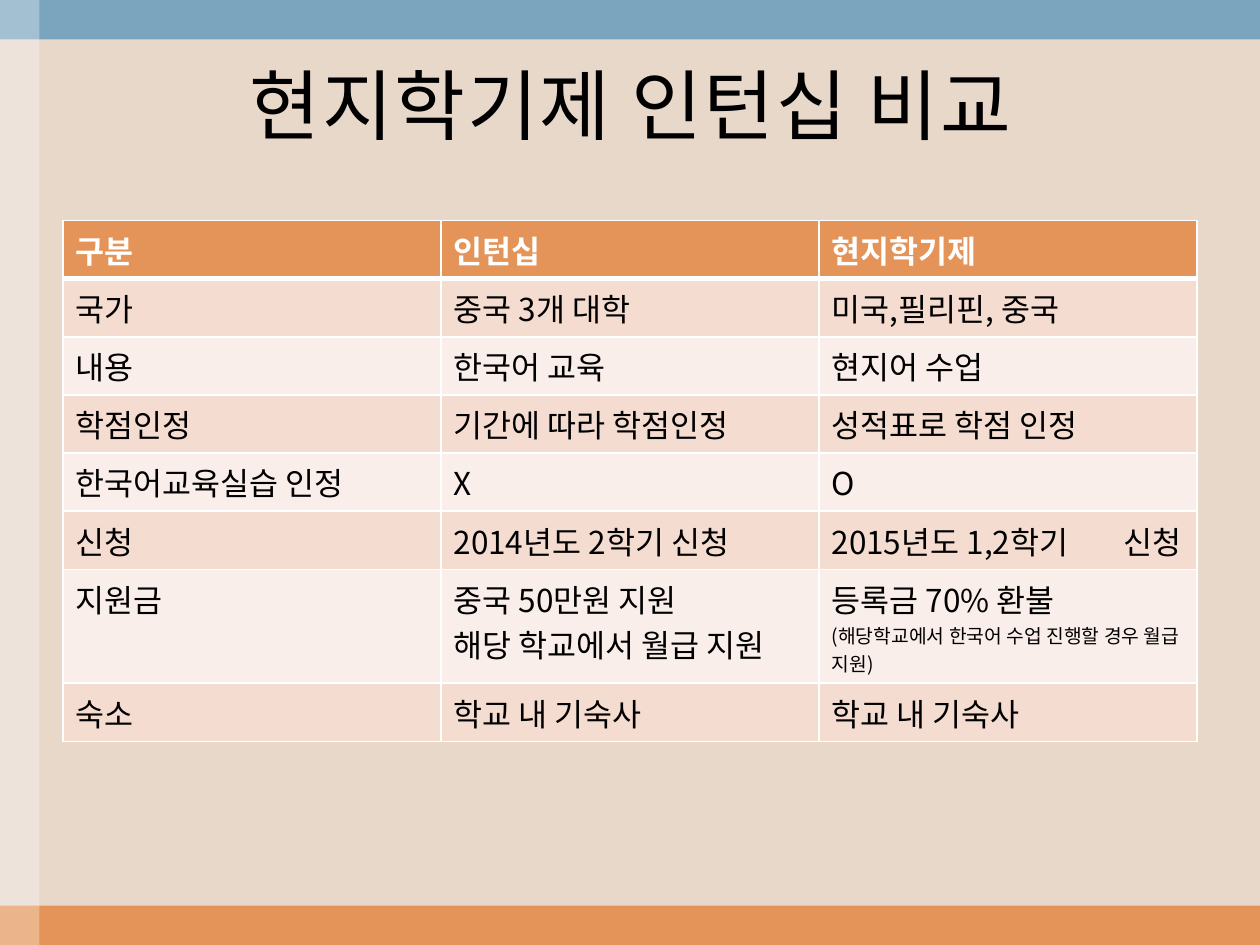
from lxml import etree
from pptx import Presentation
from pptx.dml.color import RGBColor
from pptx.enum.shapes import MSO_SHAPE
from pptx.enum.text import MSO_ANCHOR, PP_ALIGN
from pptx.oxml.ns import qn
from pptx.util import Pt

RECTANGLE = MSO_SHAPE.RECTANGLE
MIDDLE = MSO_ANCHOR.MIDDLE
CENTER = PP_ALIGN.CENTER

FONT = "Noto Sans CJK KR"
WIDTH, HEIGHT, BAND = 720, 540, 22.5
SAND, ORANGE, BLUE = "E8D8CA", "E49458", "7BA5BE"
WHITE, BLACK = "FFFFFF", "000000"
STRIPES = ("F5DCD1", "FAEEEA")
BODY_SIZE, NOTE_SIZE = 18, 11
ROW_HEIGHT, SUPPORT_HEIGHT = 33.25, 65.1
TERM_TAB = 167

COMPARISON = [
    ("구분", "인턴십", "현지학기제"),
    ("국가", "중국 3개 대학", "미국,필리핀, 중국"),
    ("내용", "한국어 교육", "현지어 수업"),
    ("학점인정", "기간에 따라 학점인정", "성적표로 학점 인정"),
    ("한국어교육실습 인정", "X", "O"),
    ("신청", "2014년도 2학기 신청", "2015년도 1,2학기\t신청"),
    ("지원금", "중국 50만원 지원\n해당 학교에서 월급 지원",
     "등록금 70% 환불\n(해당학교에서 한국어 수업 진행할 경우 월급 지원)"),
    ("숙소", "학교 내 기숙사", "학교 내 기숙사"),
]


def paint(fill, color):
    """Give a fill one solid colour."""
    fill.solid()
    fill.fore_color.rgb = RGBColor.from_string(color)


def style_paragraph(paragraph, size, color, bold=False):
    """Set the Latin and East Asian font of a paragraph."""
    font = paragraph.font
    font.name, font.size, font.bold = FONT, Pt(size), bold
    font.color.rgb = RGBColor.from_string(color)
    properties = paragraph._p.pPr.find(qn("a:defRPr"))
    etree.SubElement(properties, qn("a:ea"), typeface=FONT)
    return properties


def add_tab_stop(paragraph, position):
    """Set a left tab stop on a styled paragraph."""
    stops = etree.Element(qn("a:tabLst"))
    etree.SubElement(stops, qn("a:tab"), pos=str(Pt(position)), algn="l")
    paragraph._p.pPr.insert(0, stops)


def add_band(slide, left, top, width, height, color, opacity=100):
    """Draw one plain band of the frame."""
    band = slide.shapes.add_shape(RECTANGLE, Pt(left), Pt(top), Pt(width), Pt(height))
    band.shadow.inherit = False
    band.line.fill.background()
    paint(band.fill, color)
    if opacity < 100:
        tint = band._element.spPr.find(qn("a:solidFill"))[0]
        etree.SubElement(tint, qn("a:alpha"), val=str(opacity * 1000))


def add_frame(slide, width, height):
    """Draw the bands along the bottom, top and left edges."""
    add_band(slide, 0, height - BAND, width, BAND, ORANGE)
    add_band(slide, 0, 0, width, BAND, BLUE)
    add_band(slide, 0, 0, BAND, height, WHITE, 30)


def add_title(slide, left, top, width, height):
    """Place the centred heading."""
    heading = slide.shapes.add_textbox(Pt(left), Pt(top), Pt(width), Pt(height)).text_frame
    heading.word_wrap = True
    heading.vertical_anchor = MIDDLE
    heading.text = "현지학기제 인턴십 비교"
    paragraph = heading.paragraphs[0]
    paragraph.alignment = CENTER
    style_paragraph(paragraph, 44, BLACK).set("spc", "100")


def add_borders(cell, top, bottom):
    """Outline a cell in white, with given top and bottom weights."""
    properties = cell._tc.get_or_add_tcPr()
    for side, weight in (("L", 1), ("R", 1), ("T", top), ("B", bottom)):
        border = etree.SubElement(properties, qn(f"a:ln{side}"), w=str(Pt(weight)))
        solid = etree.SubElement(border, qn("a:solidFill"))
        etree.SubElement(solid, qn("a:srgbClr"), val=WHITE)


def add_comparison(slide, left, top, width):
    """Place the table that compares the two programmes."""
    heights = [SUPPORT_HEIGHT if entries[0] == "지원금" else ROW_HEIGHT
               for entries in COMPARISON]
    table = slide.shapes.add_table(len(COMPARISON), len(COMPARISON[0]), Pt(left), Pt(top),
                                   Pt(width), Pt(sum(heights))).table
    for row, entries in enumerate(COMPARISON):
        header = row == 0
        table.rows[row].height = Pt(heights[row])
        for column, entry in enumerate(entries):
            cell = table.cell(row, column)
            add_borders(cell, 3 if row == 1 else 1, 3 if header else 1)
            paint(cell.fill, ORANGE if header else STRIPES[(row - 1) % 2])
            cell.text = entry
            for paragraph in cell.text_frame.paragraphs:
                size = NOTE_SIZE if paragraph.text.startswith("(") else BODY_SIZE
                style_paragraph(paragraph, size, WHITE if header else BLACK, header)
                if "\t" in paragraph.text:
                    add_tab_stop(paragraph, TERM_TAB)


def main():
    """Build and save the slide."""
    deck = Presentation()
    deck.slide_width, deck.slide_height = Pt(WIDTH), Pt(HEIGHT)
    slide = deck.slides.add_slide(deck.slide_layouts[6])
    paint(slide.background.fill, SAND)
    add_frame(slide, WIDTH, HEIGHT)
    add_title(slide, 23.5, 22.5, 674, 74)
    add_comparison(slide, 36, 126, 648)
    deck.save("out.pptx")


if __name__ == "__main__":
    main()
